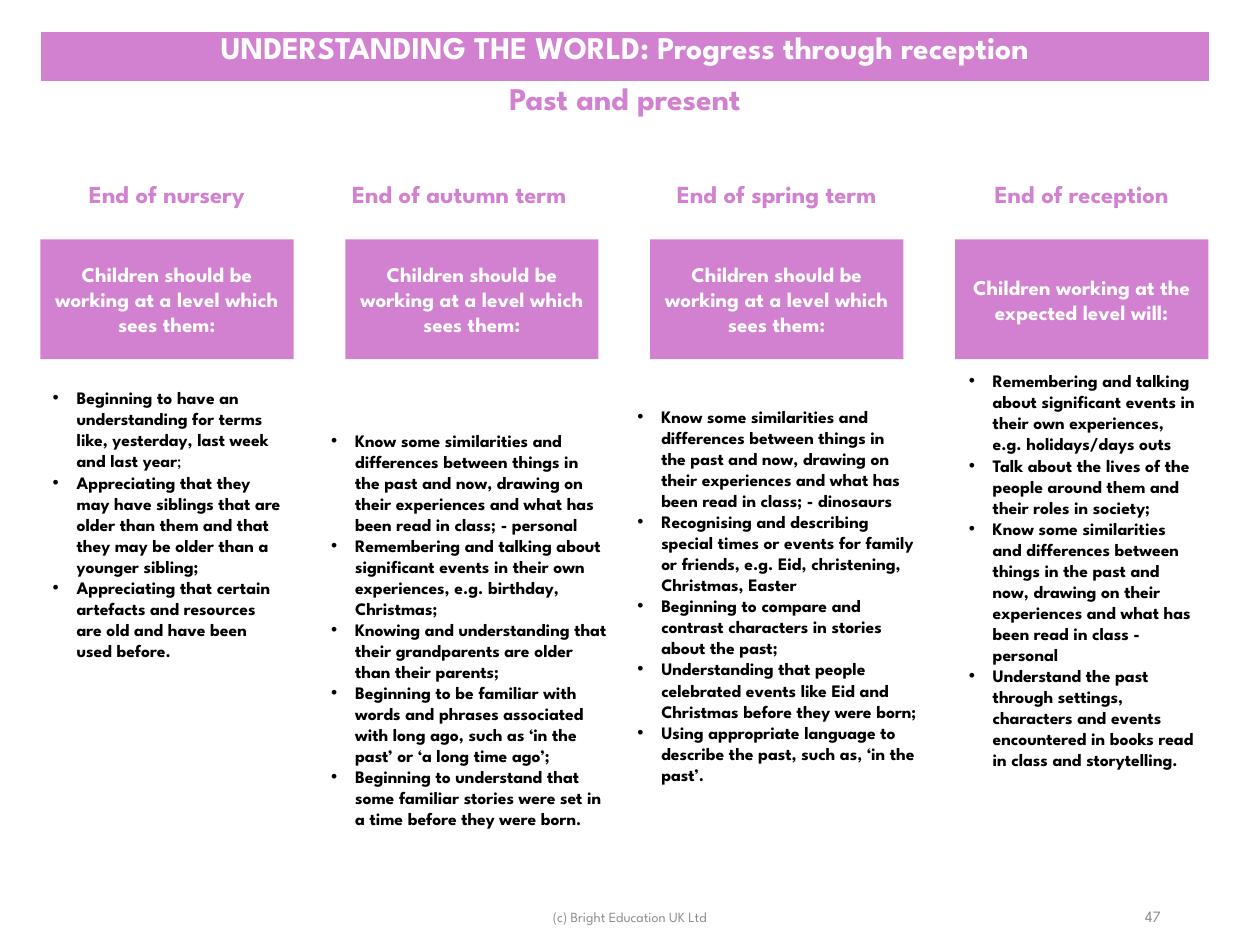
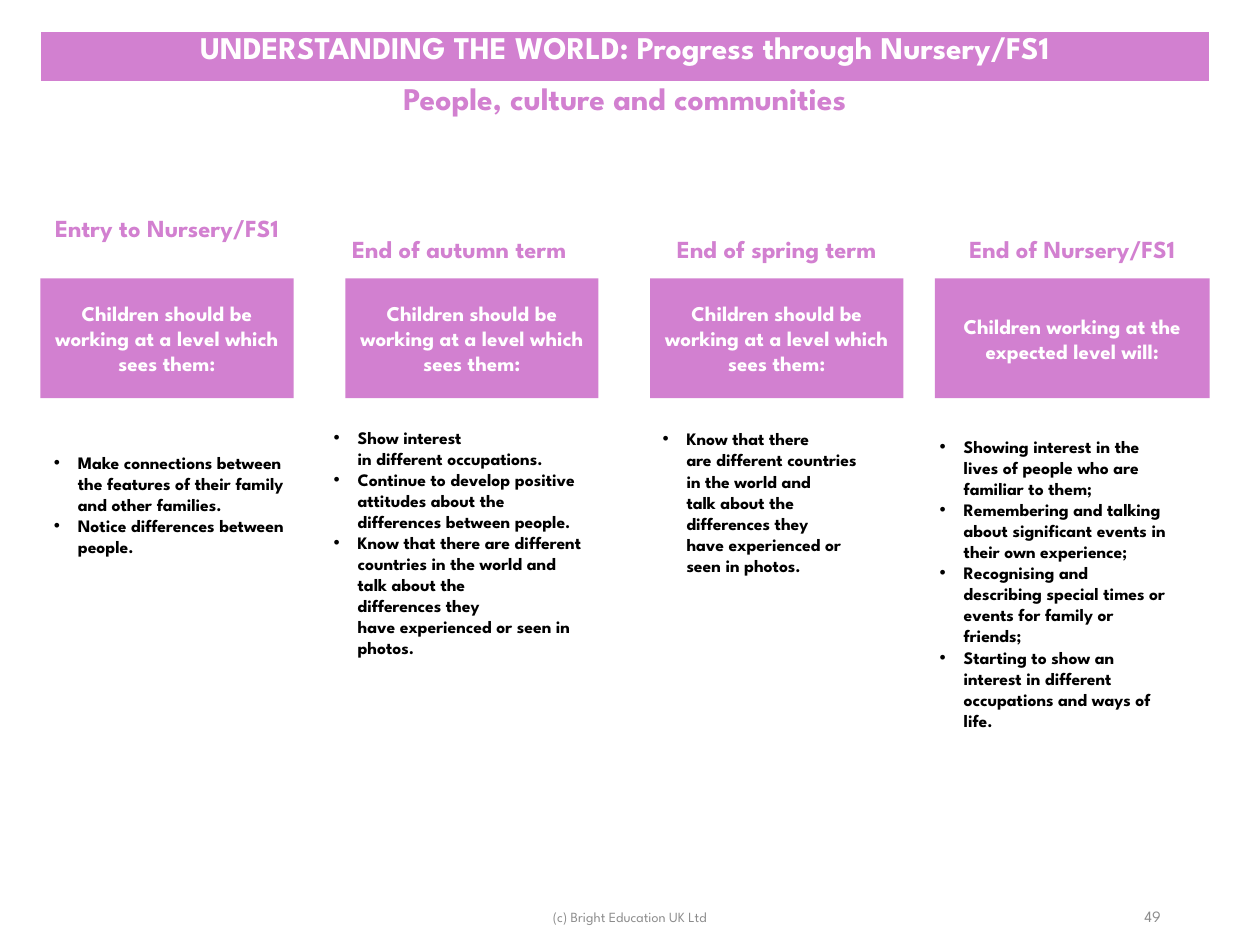
from lxml import etree
from pptx import Presentation
from pptx.dml.color import RGBColor
from pptx.enum.shapes import MSO_SHAPE as Shape
from pptx.enum.text import MSO_ANCHOR as Anchor, PP_ALIGN as Align
from pptx.oxml.ns import qn
from pptx.util import Inches, Pt

# Shared look
ORCHID = RGBColor(0xD2, 0x80, 0xD0)
WHITE = RGBColor(0xFF, 0xFF, 0xFF)
BLACK = RGBColor(0x00, 0x00, 0x00)
GREY = RGBColor(0x8C, 0x8C, 0x8C)
FONT = "League Spartan"
BULLET_INDENT = Inches(0.19)
NO_BREAK_SPACE = chr(160)

# Four-column grid, in inches
MARGIN, COLUMN_STEP, COLUMN_WIDTH = 0.32, 2.42, 2.01
BAND_TOP, BAND_WIDTH, BAND_ROW = 0.25, 9.28, 0.4
PROMPT_HEIGHT, LABEL_HEIGHT = 0.95, 0.34

FOOTER = "(c) Bright Education UK Ltd"
WORKING_AT = "Children should be working at a level which sees them:"
EXPECTED = "Children working at the expected level will:"
PROMPTS = [WORKING_AT] * 3 + [EXPECTED]

# In the texts, ~ stands for a no-break space and text after | is not bold
COUNTRIES = ("Know that there are~different countries in~the world and talk~about the "
             "differences~they have~experienced or seen~in photos.")
SIMILARITIES = ("Know some similarities~and differences~between things in the~past and now, "
                "drawing~on their experiences~and what has been~read in class; - ")

# Column: label, label (left, top, width), prompt (left, width),
# points (left, top, width, height), points
lefts = [MARGIN + COLUMN_STEP * i for i in range(4)]
PAGES = [
    {
        "title": "UNDERSTANDING THE WORLD: Progress through reception",
        "topic": "Past and present",
        "number": "47",
        "prompt_top": 1.9,
        "columns": [
            ("End of nursery", (lefts[0], 1.37, COLUMN_WIDTH), (lefts[0], COLUMN_WIDTH),
             (0.32, 3.03, 2.01, 2.26), [
                "Beginning to have an understanding for terms like, yesterday, "
                "last week and last year|;",
                "Appreciating that they may have siblings that are older than them "
                "and that they may be older than a younger sibling;",
                "Appreciating that certain artefacts and resources are old and "
                "have been used before."]),
            ("End of autumn term", (2.54, 1.37, 2.21), (lefts[1], COLUMN_WIDTH),
             (2.53, 3.03, 2.42, 3.93), [
                SIMILARITIES + "personal",
                "Remembering and talking about significant events in their own "
                "experiences, e.g. birthday, Christmas;",
                "Knowing and understanding that their grandparents are older than "
                "their parents;",
                "Beginning to be familiar with words and phrases associated with "
                "long ago, such as ‘in the past’ or ‘a long time ago’;",
                "Beginning to understand that some familiar stories were set in a "
                "time before they were born."]),
            ("End of spring term", (lefts[2], 1.37, COLUMN_WIDTH), (lefts[2], COLUMN_WIDTH),
             (4.96, 3.03, 2.43, 3.39), [
                SIMILARITIES + "dinosaurs",
                "Recognising and describing special times or events for family or "
                "friends, e.g. Eid, christening, Christmas, Easter",
                "Beginning to compare and contrast characters in stories about the past;",
                "Understanding that people celebrated events like Eid and Christmas "
                "before they were born;",
                "Using appropriate language to describe the past, such as, ‘in the past’."]),
            ("End of reception", (lefts[3], 1.37, COLUMN_WIDTH), (lefts[3], COLUMN_WIDTH),
             (7.59, 3.03, 2.01, 2.99), [
                "Remembering and~talking about significant~events in their own~experiences, "
                "e.g. holidays/days outs",
                "Talk about the lives of the people around them and their roles in society;",
                "Know some similarities and differences between things in the past "
                "and now, drawing on their experiences and what has been read in "
                "class - personal",
                "Understand the past through settings, characters and events "
                "encountered in books read in class and storytelling."]),
        ],
    },
    {
        "title": "UNDERSTANDING THE WORLD: Progress through Nursery/FS1",
        "topic": "People, culture and communities",
        "number": "49",
        "prompt_top": 2.21,
        "columns": [
            ("Entry to Nursery/FS1", (lefts[0], 1.64, COLUMN_WIDTH), (lefts[0], COLUMN_WIDTH),
             (0.33, 3.54, 2.21, 0.93), [
                "Make connections~between the features~of their family and~other families.",
                "Notice differences~between people."]),
            ("End of autumn term", (2.54, 1.81, 2.21), (lefts[1], COLUMN_WIDTH),
             (2.55, 3.34, 2.21, 1.93), [
                "Show interest in~different~occupations.",
                "Continue to develop~positive attitudes~about the "
                "differences~between~people.",
                COUNTRIES]),
            ("End of spring term", (lefts[2], 1.81, COLUMN_WIDTH), (lefts[2], COLUMN_WIDTH),
             (5.16, 3.35, 2.01, 1.27), [COUNTRIES]),
            ("End of Nursery/FS1", (7.42, 1.81, 2.18), (7.42, 2.18),
             (7.36, 3.42, 2.01, 2.42), [
                "Showing interest in the lives of people who are familiar to them;",
                "Remembering and talking about significant events in their own experience;",
                "Recognising and describing special times or events for family or friends;",
                "Starting to show an interest in different occupations and ways of life."]),
        ],
    },
]


def write(frame, *paragraphs, size, color, bold=True, align=Align.CENTER, bullet=False):
    """Fill a text frame with evenly formatted paragraphs."""
    frame.word_wrap = True
    for i, text in enumerate(paragraphs):
        para = frame.paragraphs[0] if i == 0 else frame.add_paragraph()
        para.alignment = align
        main, _, plain = text.replace("~", NO_BREAK_SPACE).partition("|")
        for part, is_bold in ((main, bold), (plain, False)):
            if part:
                run = para.add_run()
                run.text = part
                run.font.name, run.font.size = FONT, Pt(size)
                run.font.bold, run.font.color.rgb = is_bold, color
        if bullet:
            props = para._p.get_or_add_pPr()
            props.set("marL", str(BULLET_INDENT))
            props.set("indent", str(-BULLET_INDENT))
            etree.SubElement(props, qn("a:buFont")).set("typeface", "Arial")
            etree.SubElement(props, qn("a:buChar")).set("char", "•")


def text_box(slide, box, *paragraphs, anchor=Anchor.MIDDLE, **style):
    frame = slide.shapes.add_textbox(*map(Inches, box)).text_frame
    frame.vertical_anchor = anchor
    write(frame, *paragraphs, **style)


deck = Presentation()
deck.slide_width, deck.slide_height = Inches(10), Inches(7.5)

for page in PAGES:
    slide = deck.slides.add_slide(deck.slide_layouts[6])

    # Title band and topic; the table style draws the white borders
    band = slide.shapes.add_table(2, 1, Inches(MARGIN), Inches(BAND_TOP),
                                  Inches(BAND_WIDTH), Inches(2 * BAND_ROW)).table
    title_cell, topic_cell = band.cell(0, 0), band.cell(1, 0)
    title_cell.fill.solid()
    title_cell.fill.fore_color.rgb = ORCHID
    topic_cell.fill.background()
    write(title_cell.text_frame, page["title"], size=18, color=WHITE)
    write(topic_cell.text_frame, page["topic"], size=18, color=ORCHID)

    # Stage columns: label, prompt, points
    for prompt_text, column in zip(PROMPTS, page["columns"]):
        label, label_box, (prompt_left, prompt_width), points_box, points = column
        text_box(slide, (*label_box, LABEL_HEIGHT), label,
                 anchor=Anchor.TOP, size=14, color=ORCHID)

        prompt_box = (prompt_left, page["prompt_top"], prompt_width, PROMPT_HEIGHT)
        prompt = slide.shapes.add_shape(Shape.RECTANGLE, *map(Inches, prompt_box))
        prompt.shadow.inherit = False
        prompt.fill.solid()
        prompt.fill.fore_color.rgb = ORCHID
        prompt.line.fill.background()
        prompt.text_frame.vertical_anchor = Anchor.MIDDLE
        write(prompt.text_frame, prompt_text, size=12, color=WHITE)

        text_box(slide, points_box, *points, size=10, color=BLACK,
                 align=Align.LEFT, bullet=True)

    # Footer and page number
    text_box(slide, (3.31, 7.08, 3.38, 0.4), FOOTER, size=8, color=GREY, bold=False)
    text_box(slide, (7.06, 7.07, 2.25, 0.4), page["number"], size=9, color=GREY,
             bold=False, align=Align.RIGHT)

deck.save("out.pptx")
